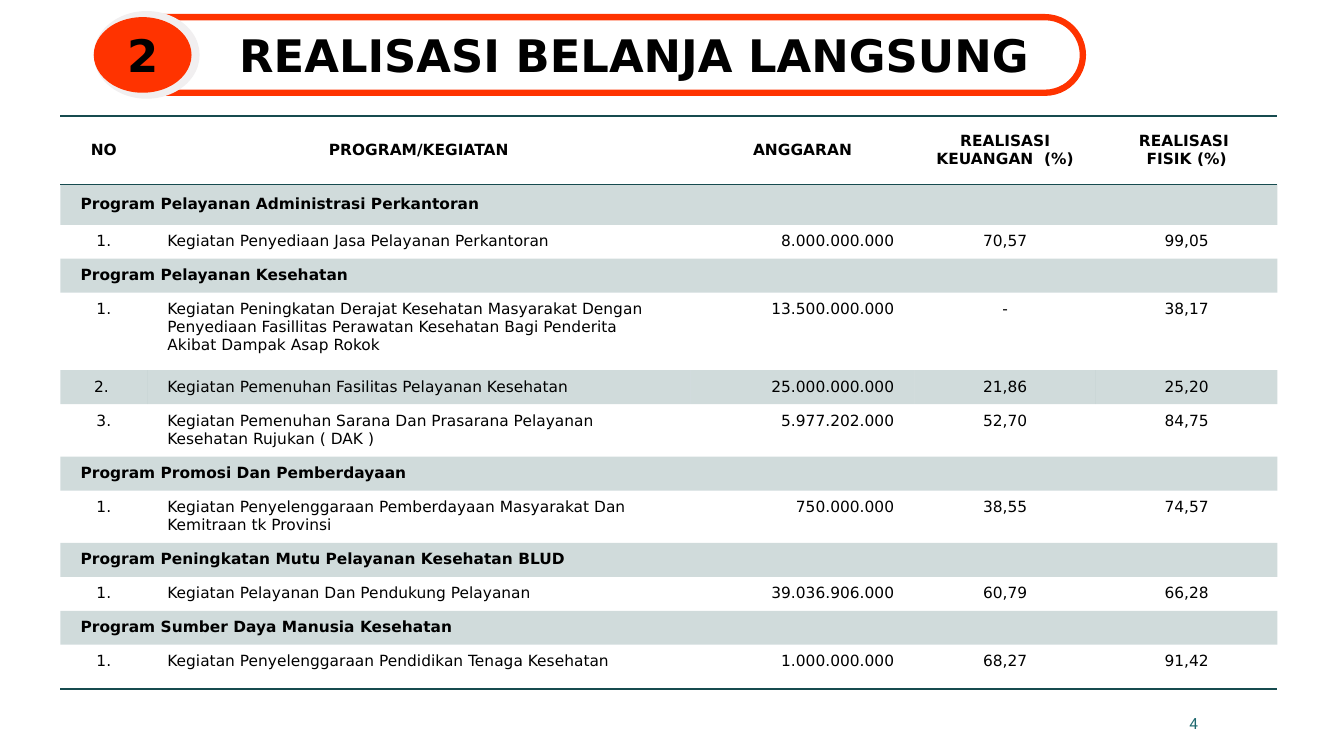
from lxml import etree
from pptx import Presentation
from pptx.dml.color import RGBColor
from pptx.enum.shapes import MSO_SHAPE
from pptx.enum.text import MSO_ANCHOR, PP_ALIGN
from pptx.oxml.ns import qn
from pptx.util import Inches, Pt

LEFT, CENTER, RIGHT = PP_ALIGN.LEFT, PP_ALIGN.CENTER, PP_ALIGN.RIGHT
TOP, MIDDLE = MSO_ANCHOR.TOP, MSO_ANCHOR.MIDDLE
PILL, OVAL = MSO_SHAPE.ROUNDED_RECTANGLE, MSO_SHAPE.OVAL
NO_STYLE = "{2D5ABB26-0587-4C30-8999-92F81FD0307C}"
THEME = {
    "font": "DejaVu Sans", "number_font": "Roboto",
    "title": 32, "body": 11,
    "ink": "000000", "accent": "FF3300", "halo": "F1EFF0",
    "teal": "164B4F", "number": "1F696F",
}


def write(tf, text, size=THEME["body"], color=THEME["ink"], font=THEME["font"],
          bold=False, align=LEFT):
    """Fill a text frame, one paragraph for each line of text."""
    tf.word_wrap = True
    for i, line in enumerate(text.split("\n")):
        p = tf.add_paragraph() if i else tf.paragraphs[0]
        p.alignment = align
        r = p.add_run()
        r.text = line
        r.font.size, r.font.bold, r.font.name = Pt(size), bold, font
        r.font.color.rgb = RGBColor.from_string(color)


prs = Presentation()
prs.slide_width, prs.slide_height = Inches(13.33), Inches(7.5)
s = prs.slides.add_slide(prs.slide_layouts[6])

# Title banner
title = s.shapes.add_textbox(Inches(1.74), Inches(0.2), Inches(9.26), Inches(0.69))
tf = title.text_frame
tf.margin_left = tf.margin_right = Inches(0.15)
tf.margin_top = tf.margin_bottom = Inches(0.07)
write(tf, "REALISASI BELANJA LANGSUNG ", size=THEME["title"], bold=True, align=CENTER)

banner = [
    (PILL, (1.09, 0.17, 9.65, 0.75), None, "accent", ""),
    (OVAL, (0.93, 0.11, 1.05, 0.87), "halo", None, ""),
    (OVAL, (0.93, 0.17, 0.97, 0.75), "accent", None, "2"),
]
for kind, box, fill, line, text in banner:
    sp = s.shapes.add_shape(kind, *map(Inches, box))
    sp.shadow.inherit = False
    if kind == PILL:
        sp.adjustments[0] = 0.5
    if fill:
        sp.fill.solid()
        sp.fill.fore_color.rgb = RGBColor.from_string(THEME[fill])
    else:
        sp.fill.background()
    if line:
        sp.line.color.rgb = RGBColor.from_string(THEME[line])
        sp.line.width = Pt(4.5)
    else:
        sp.line.fill.background()
    if text:
        sp.text_frame.vertical_anchor = MIDDLE
        write(sp.text_frame, text, size=THEME["title"], bold=True, align=CENTER)

# Budget table: a row with a single entry is a programme heading
COLS = [0.86, 5.39, 2.22, 1.8, 1.8]
ALIGNS = [CENTER, LEFT, RIGHT, CENTER, CENTER]
ROWS = [
    (0.68, ["NO", "PROGRAM/KEGIATAN", "ANGGARAN", "REALISASI KEUANGAN  (%)",
            "REALISASI \nFISIK (%)"]),
    (0.4, ["Program Pelayanan Administrasi Perkantoran"]),
    (0.31, ["1.", "Kegiatan Penyediaan Jasa Pelayanan Perkantoran",
            "8.000.000.000", "70,57", "99,05"]),
    (0.31, ["Program Pelayanan Kesehatan"]),
    (0.77, ["1.", "Kegiatan Peningkatan Derajat Kesehatan Masyarakat Dengan "
            "Penyediaan Fasillitas Perawatan Kesehatan Bagi Penderita "
            "Akibat Dampak Asap Rokok", "13.500.000.000", "-", "38,17"]),
    (0.31, ["2. ", "Kegiatan Pemenuhan Fasilitas Pelayanan Kesehatan",
            "25.000.000.000", "21,86", "25,20"]),
    (0.49, ["3.", "Kegiatan Pemenuhan Sarana Dan Prasarana Pelayanan "
            "Kesehatan Rujukan ( DAK )", "5.977.202.000", "52,70", "84,75"]),
    (0.31, ["Program Promosi Dan Pemberdayaan"]),
    (0.49, ["1.", "Kegiatan Penyelenggaraan Pemberdayaan Masyarakat Dan "
            "Kemitraan tk Provinsi", "750.000.000", "38,55", "74,57"]),
    (0.31, ["Program Peningkatan Mutu Pelayanan Kesehatan BLUD"]),
    (0.31, ["1.", "Kegiatan Pelayanan Dan Pendukung Pelayanan",
            "39.036.906.000", "60,79", "66,28"]),
    (0.31, ["Program Sumber Daya Manusia Kesehatan"]),
    (0.44, ["1.", "Kegiatan Penyelenggaraan Pendidikan Tenaga Kesehatan",
            "1.000.000.000", "68,27", "91,42"]),
]
last = len(ROWS) - 1
frame = s.shapes.add_table(len(ROWS), len(COLS), Inches(0.6), Inches(1.15),
                           Inches(sum(COLS)), Inches(sum(h for h, _ in ROWS)))
table = frame.table
table.first_row = table.horz_banding = False
next(frame.element.iter(qn("a:tableStyleId"))).text = NO_STYLE
for column, width in zip(table.columns, COLS):
    column.width = Inches(width)

for i, (height, texts) in enumerate(ROWS):
    table.rows[i].height = Inches(height)
    header, heading = i == 0, len(texts) == 1
    if heading:
        table.cell(i, 0).merge(table.cell(i, len(COLS) - 1))
    edges = {0: ["a:lnT", "a:lnB"], last: ["a:lnB"]}.get(i, [])
    for j, align in enumerate(ALIGNS):
        cell = table.cell(i, j)
        cell.margin_left = cell.margin_right = Inches(0.2)
        cell.margin_top = cell.margin_bottom = Pt(5.5)
        cell.vertical_anchor = MIDDLE if i < 2 else TOP
        if j < len(texts):
            write(cell.text_frame, texts[j], bold=header or heading,
                  align=CENTER if header else LEFT if heading else align)
        tcPr = cell._tc.get_or_add_tcPr()
        if i % 2 and not header:
            cell.fill.solid()
            cell.fill.fore_color.rgb = RGBColor.from_string(THEME["teal"])
            tint = next(tcPr.iter(qn("a:srgbClr")))
            etree.SubElement(tint, qn("a:alpha"), val="20000")
        else:
            cell.fill.background()
        for k, edge in enumerate(edges):
            ln = etree.Element(qn(edge), w=str(Pt(1)))
            solid = etree.SubElement(ln, qn("a:solidFill"))
            etree.SubElement(solid, qn("a:srgbClr"), val=THEME["teal"])
            tcPr.insert(k, ln)

# Slide number
number = s.shapes.add_textbox(Inches(8.87), Inches(6.98), Inches(3.11), Inches(0.4))
number.text_frame.vertical_anchor = MIDDLE
write(number.text_frame, "4", color=THEME["number"], font=THEME["number_font"],
      align=RIGHT)

prs.save("out.pptx")
